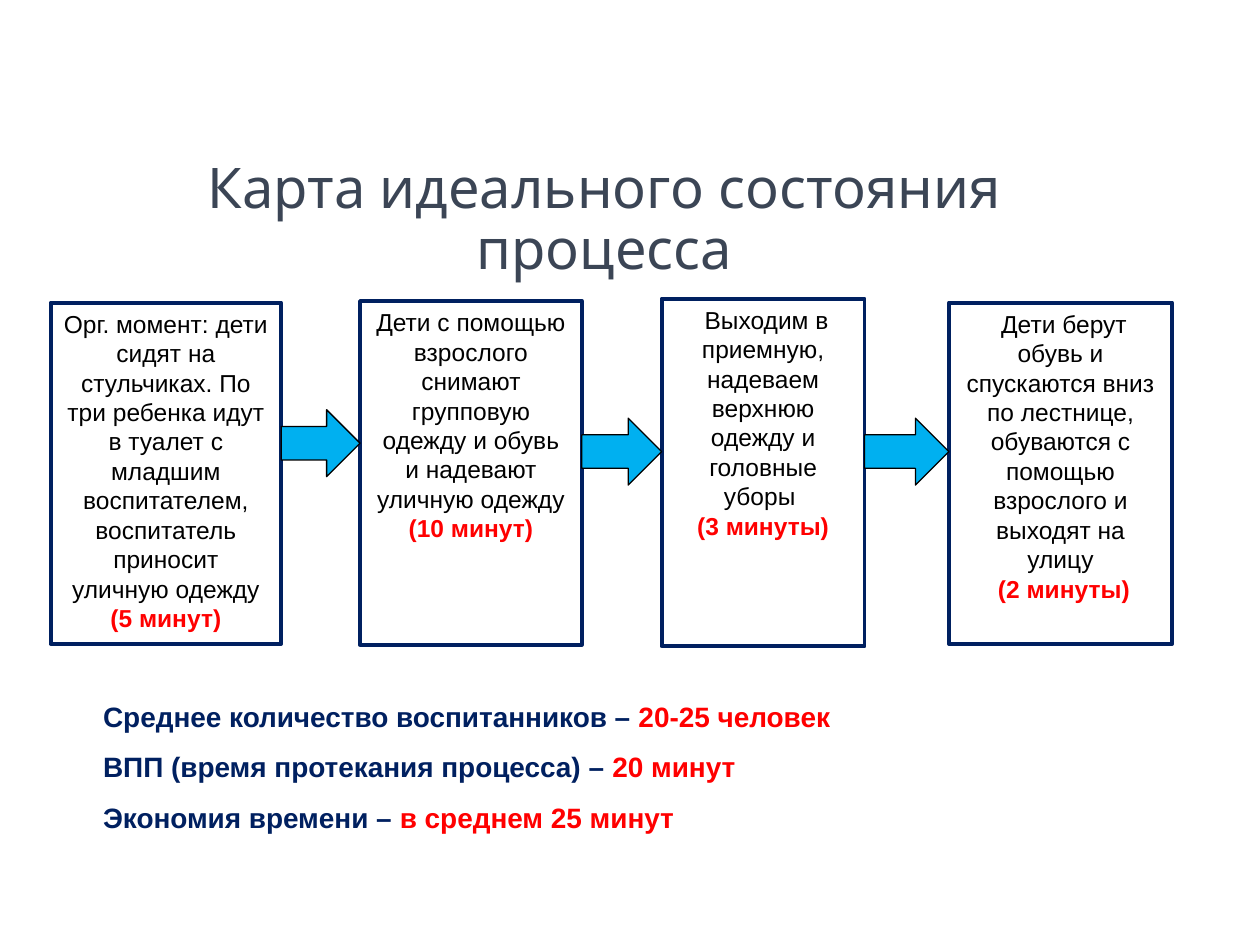
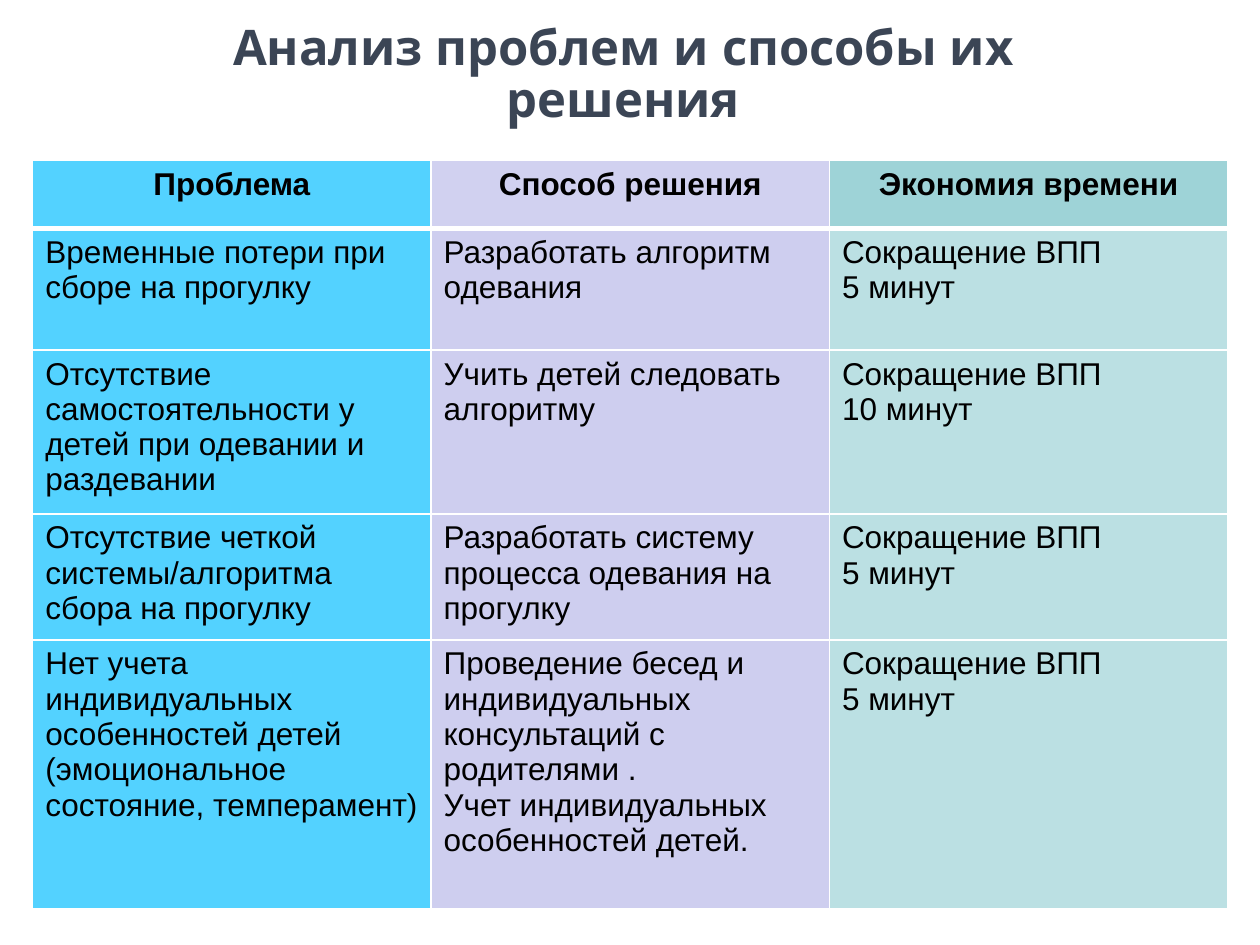
from lxml import etree
from pptx import Presentation
from pptx import util as u
from pptx.dml.color import RGBColor
from pptx.enum import shapes, text
from pptx.oxml import ns

COLORS = {
    "title": "3B4555", "navy": "002060", "red": "FF0000", "black": "000000",
    "white": "FFFFFF", "arrow": "00B0F0", "problem": "53D2FF",
    "solution_head": "D1D1F0", "solution": "CECEEF",
    "saving_head": "9ED3D7", "saving": "BBE0E3",
}
CENTER = text.PP_ALIGN.CENTER


def add_run(paragraph, words, size, color, bold=False, font="Arial"):
    run = paragraph.add_run()
    run.text = words
    run.font.name = font
    run.font.size = u.Pt(size)
    run.font.bold = bold
    run.font.color.rgb = RGBColor.from_string(COLORS[color])


def add_titled_slide(words, left, top, width, height, size, bold):
    slide = presentation.slides.add_slide(presentation.slide_layouts[5])
    title = slide.shapes.title
    title.left, title.top, title.width, title.height = (
        u.Cm(length) for length in (left, top, width, height))
    frame = title.text_frame
    frame.word_wrap = True
    frame.auto_size = text.MSO_AUTO_SIZE.SHAPE_TO_FIT_TEXT
    frame.vertical_anchor = text.MSO_ANCHOR.TOP
    paragraph = frame.paragraphs[0]
    paragraph.alignment = CENTER
    paragraph.line_spacing = 0.9
    add_run(paragraph, words, size, "title", bold, "League Spartan")
    return slide


presentation = Presentation()
presentation.slide_width = u.Cm(25.4)
presentation.slide_height = u.Cm(19.05)

# Slide 1: map of the ideal process
slide = add_titled_slide("Карта идеального состояния процесса",
                         1.7, 3.1, 20.96, 1.63, 32, False)

# Steps: left, top, width, height, then paragraphs of (words, colour) runs
steps = [
    (1.02, 6.1, 4.65, 6.88, [
        [("Орг. момент: дети сидят на стульчиках. По три ребенка идут в туалет "
          "с младшим воспитателем, воспитатель приносит уличную одежду ", "black"),
         ("(5 минут)", "red")]]),
    (7.26, 6.07, 4.47, 6.93, [
        [("Дети с помощью взрослого снимают групповую одежду и обувь "
          "и надевают уличную одежду ", "black"),
         ("(10 минут)", "red")]]),
    (13.34, 6.02, 4.09, 7.01, [
        [(" Выходим в приемную, надеваем верхнюю одежду "
          "и головные уборы ", "black")],
        [("(3 минуты)", "red")]]),
    (19.13, 6.1, 4.5, 6.88, [
        [(" Дети берут обувь и спускаются вниз по лестнице, обуваются "
          "с помощью взрослого и выходят на улицу", "black")],
        [(" (2 минуты)", "red")]]),
]
for left, top, width, height, paragraphs in steps:
    box = slide.shapes.add_shape(shapes.MSO_SHAPE.RECTANGLE, u.Cm(left),
                                 u.Cm(top), u.Cm(width), u.Cm(height))
    box.shadow.inherit = False
    box.fill.solid()
    box.fill.fore_color.rgb = RGBColor.from_string(COLORS["white"])
    box.line.color.rgb = RGBColor.from_string(COLORS["navy"])
    box.line.width = u.Pt(2.25)
    frame = box.text_frame
    frame.word_wrap = True
    frame.vertical_anchor = text.MSO_ANCHOR.TOP
    for index, runs in enumerate(paragraphs):
        paragraph = frame.add_paragraph() if index else frame.paragraphs[0]
        paragraph.alignment = CENTER
        for words, color in runs:
            add_run(paragraph, words, 14, color, color == "red")

# Arrows fill the gaps between neighbouring steps
for step, next_step, top in zip(steps, steps[1:], (8.26, 8.43, 8.43)):
    start = step[0] + step[2]
    arrow = slide.shapes.add_shape(
        shapes.MSO_SHAPE.RIGHT_ARROW, u.Cm(start), u.Cm(top),
        u.Cm(next_step[0] - start), u.Cm(1.35))
    arrow.shadow.inherit = False
    arrow.fill.solid()
    arrow.fill.fore_color.rgb = RGBColor.from_string(COLORS["arrow"])
    arrow.line.color.rgb = RGBColor.from_string(COLORS["black"])
    arrow.line.width = u.Pt(0.75)

# Summary figures
summary = [
    ("Среднее количество воспитанников – ", "20-25 человек"),
    ("ВПП (время протекания процесса) – ", "20 минут"),
    ("Экономия времени – ", "в среднем 25 минут"),
]
frame = slide.shapes.add_textbox(u.Cm(1.83), u.Cm(13.64),
                                 u.Cm(15.34), u.Cm(3.33)).text_frame
frame.word_wrap = True
for index, (label, value) in enumerate(summary):
    paragraph = frame.add_paragraph() if index else frame.paragraphs[0]
    paragraph.line_spacing = 1.5
    add_run(paragraph, label, 16, "navy", True)
    add_run(paragraph, value, 16, "red", True)

# Slide 2: problems and solutions
slide = add_titled_slide("Анализ проблем и способы их решения",
                         2.39, 0.33, 20.35, 1.45, 28, True)

# Each cell is a list of paragraphs
rows = [
    (["Проблема"], ["Способ решения"], ["Экономия времени"]),
    (["Временные потери при сборе на прогулку"],
     ["Разработать алгоритм одевания"],
     ["Сокращение ВПП", "5 минут"]),
    (["Отсутствие самостоятельности у детей при одевании и раздевании"],
     ["Учить детей следовать алгоритму"],
     ["Сокращение ВПП", "10 минут"]),
    (["Отсутствие четкой системы/алгоритма сбора на прогулку"],
     ["Разработать систему процесса одевания на прогулку"],
     ["Сокращение ВПП", "5 минут"]),
    (["Нет учета индивидуальных особенностей детей "
      "(эмоциональное состояние, темперамент)"],
     ["Проведение бесед и индивидуальных консультаций с родителями .",
      "Учет индивидуальных особенностей детей."],
     ["Сокращение ВПП", "5 минут"]),
]
row_heights = [1.37, 2.46, 3.2, 2.51, 5.41]
header_fills = ["problem", "solution_head", "saving_head"]
body_fills = ["problem", "solution", "saving"]

table = slide.shapes.add_table(len(rows), 3, u.Cm(0.66), u.Cm(3.23),
                               u.Cm(3 * 8.03), u.Cm(sum(row_heights))).table
for column in table.columns:
    column.width = u.Cm(8.03)
for row_index, row in enumerate(rows):
    table.rows[row_index].height = u.Cm(row_heights[row_index])
    is_header = row_index == 0
    fills = header_fills if is_header else body_fills
    for column_index, lines in enumerate(row):
        cell = table.cell(row_index, column_index)
        for index, words in enumerate(lines):
            paragraph = (cell.text_frame.add_paragraph() if index
                         else cell.text_frame.paragraphs[0])
            paragraph.alignment = CENTER if is_header else text.PP_ALIGN.LEFT
            add_run(paragraph, words, 18, "black", is_header)

        # White borders, thicker under the header; they precede the fill
        properties = cell._tc.get_or_add_tcPr()
        for side in ("lnL", "lnR", "lnT", "lnB"):
            thick = (side, row_index) in (("lnB", 0), ("lnT", 1))
            border = etree.SubElement(properties, ns.qn("a:" + side),
                                      w=str(u.Pt(3 if thick else 1)))
            border_fill = etree.SubElement(border, ns.qn("a:solidFill"))
            etree.SubElement(border_fill, ns.qn("a:srgbClr"),
                             val=COLORS["white"])
        cell.fill.solid()
        cell.fill.fore_color.rgb = RGBColor.from_string(
            COLORS[fills[column_index]])

presentation.save("out.pptx")
